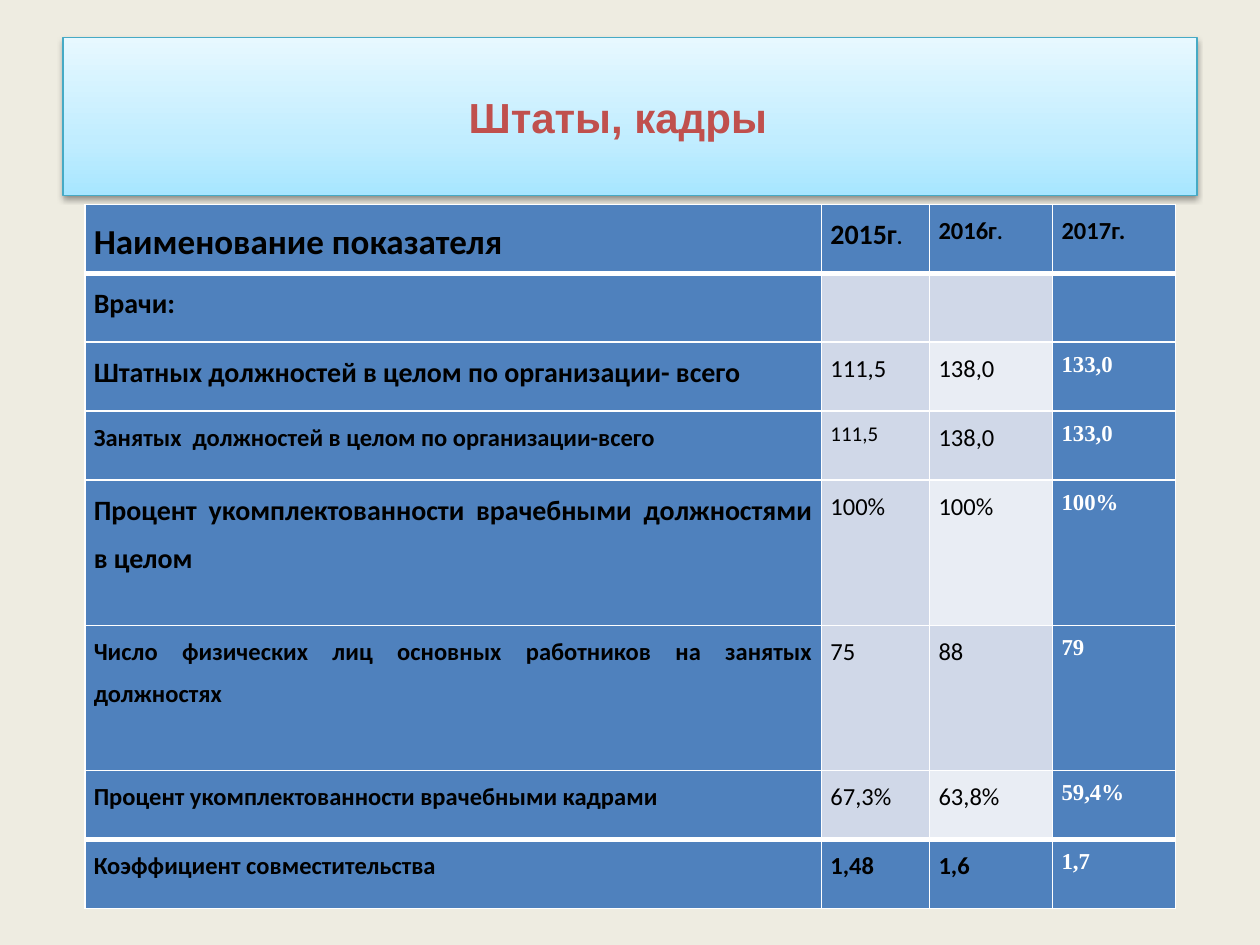
import copy

import lxml.etree
import pptx
import pptx.dml.color
import pptx.enum.shapes
import pptx.enum.text
import pptx.oxml.ns
import pptx.util

Cm, Pt = pptx.util.Cm, pptx.util.Pt
RGBColor = pptx.dml.color.RGBColor
qn = pptx.oxml.ns.qn

SAND = RGBColor(0xEE, 0xEC, 0xE1)
BLUE = RGBColor(0x4F, 0x81, 0xBD)
BAND = RGBColor(0xD0, 0xD8, 0xE8)
PALE_BAND = RGBColor(0xE9, 0xED, 0xF4)
TEAL = RGBColor(0x46, 0xAA, 0xC5)
RED = RGBColor(0xC0, 0x50, 0x4D)
BLACK = RGBColor(0, 0, 0)
WHITE = RGBColor(0xFF, 0xFF, 0xFF)
TITLE_GRADIENT = [
    (0, RGBColor(0xA7, 0xE6, 0xFF)),
    (0.35, RGBColor(0xC1, 0xED, 0xFF)),
    (1, RGBColor(0xE7, 0xF8, 0xFF)),
]

COLUMN_WIDTHS = [14.85, 2.18, 2.48, 2.48]
ROW_HEIGHT, TALL_ROW_HEIGHT = 1.39, 2.93
TALL_ROWS = (4, 5)

# Each cell is a list of (text, size) runs.
STAFF_ROWS = [
    [[("Наименование показателя", 20)], [("2015г", 16), (".", 12)],
     [("2016г", 14), (".", 12)], [("2017г.", 14)]],
    [[("Врачи:", 16)], [], [], []],
    [[("Штатных должностей в целом по организации- всего", 16)],
     [("111,5", 14)], [("138,0", 14)], [("133,0", 13)]],
    [[("Занятых  должностей в целом по организации-всего", 14)],
     [("111,5", 12)], [("138,0", 14)], [("133,0", 13)]],
    [[("Процент укомплектованности врачебными должностями в целом", 16)],
     [("100%", 14)], [("100%", 14)], [("100%", 13)]],
    [[("Число физических лиц основных работников на занятых должностях", 14)],
     [("75", 14)], [("88", 14)], [("79", 13)]],
    [[("Процент укомплектованности врачебными кадрами", 14)],
     [("67,3%", 14)], [("63,8%", 14)], [("59,4%", 13)]],
    [[("Коэффициент совместительства", 14)],
     [("1,48", 14)], [("1,6", 14)], [("1,7", 13)]],
]
LAST_ROW = len(STAFF_ROWS) - 1
LAST_COLUMN = len(COLUMN_WIDTHS) - 1


class SlideBuilder:
    title_font = "Arial"
    body_font = "Calibri"
    latest_year_font = "Times New Roman"
    line_spacing = 1.4

    def __init__(self, slide):
        self.slide = slide

    def background(self, color):
        fill = self.slide.background.fill
        fill.solid()
        fill.fore_color.rgb = color

    def format_run(self, run, size, font, color, bold=True):
        run.font.size = Pt(size)
        run.font.name = font
        run.font.color.rgb = color
        run.font.bold = bold

    def title(self, text, left, top, width, height):
        banner = self.slide.shapes.add_shape(
            pptx.enum.shapes.MSO_SHAPE.RECTANGLE,
            Cm(left), Cm(top), Cm(width), Cm(height))
        self.gradient(banner, TITLE_GRADIENT)
        banner.line.color.rgb = TEAL
        banner.line.width = Pt(0.75)
        self.drop_shadow(banner)
        frame = banner.text_frame
        frame.text = text
        frame.word_wrap = True
        frame.margin_right = Cm(0.74)
        frame.vertical_anchor = pptx.enum.text.MSO_ANCHOR.MIDDLE
        frame.paragraphs[0].alignment = pptx.enum.text.PP_ALIGN.CENTER
        self.format_run(frame.paragraphs[0].runs[0], 24, self.title_font, RED)

    def gradient(self, shape, stops):
        """Fill from bottom to top with any number of stops."""
        shape.fill.gradient()
        shape.fill.gradient_angle = 90
        stop_list = shape._element.spPr.find(".//" + qn("a:gsLst"))
        stop_list.insert(1, copy.deepcopy(stop_list[0]))
        for stop, (position, color) in zip(shape.fill.gradient_stops, stops):
            stop.position = position
            stop.color.rgb = color

    def drop_shadow(self, shape):
        shape.shadow.inherit = False
        effects = shape._element.spPr.find(qn("a:effectLst"))
        shadow = lxml.etree.SubElement(
            effects, qn("a:outerShdw"), blurRad=str(Pt(3.1)),
            dist=str(Pt(1.6)), dir="5400000", rotWithShape="0")
        color = lxml.etree.SubElement(shadow, qn("a:srgbClr"), val=str(BLACK))
        lxml.etree.SubElement(color, qn("a:alpha"), val="38000")

    def staff_table(self, rows, left, top):
        heights = [TALL_ROW_HEIGHT if i in TALL_ROWS else ROW_HEIGHT
                   for i in range(len(rows))]
        table = self.slide.shapes.add_table(
            len(rows), len(COLUMN_WIDTHS), Cm(left), Cm(top),
            Cm(sum(COLUMN_WIDTHS)), Cm(sum(heights))).table
        table.first_row = table.horz_banding = False
        for column, width in zip(table.columns, COLUMN_WIDTHS):
            column.width = Cm(width)
        for row_index, cells in enumerate(rows):
            table.rows[row_index].height = Cm(heights[row_index])
            for column_index, runs in enumerate(cells):
                self.cell(table.cell(row_index, column_index),
                          runs, row_index, column_index)

    def cell(self, cell, runs, row, column):
        inner = 0 < row < LAST_ROW
        latest_year = row > 0 and column == LAST_COLUMN
        is_value = inner and 0 < column < LAST_COLUMN
        cell.margin_left = cell.margin_right = Cm(0.18)
        cell.margin_top = cell.margin_bottom = 0
        self.borders(cell, top=3 if row in (1, LAST_ROW) else 1,
                     bottom=3 if row in (0, LAST_ROW - 1) else 1)
        cell.fill.solid()
        if not is_value:
            cell.fill.fore_color.rgb = BLUE
        elif column == 2 and row % 2 == 0:
            cell.fill.fore_color.rgb = PALE_BAND
        else:
            cell.fill.fore_color.rgb = BAND
        paragraph = cell.text_frame.paragraphs[0]
        paragraph.alignment = pptx.enum.text.PP_ALIGN.JUSTIFY
        paragraph.line_spacing = self.line_spacing
        for text, size in runs:
            run = paragraph.add_run()
            run.text = text
            self.format_run(
                run, size,
                self.latest_year_font if latest_year else self.body_font,
                WHITE if latest_year else BLACK,
                bold=not is_value)

    def borders(self, cell, top, bottom):
        """Draw white edges; call before the fill, which must follow them."""
        properties = cell._tc.get_or_add_tcPr()
        for edge, width in (("L", 1), ("R", 1), ("T", top), ("B", bottom)):
            line = lxml.etree.SubElement(
                properties, qn("a:ln" + edge), w=str(Pt(width)))
            fill = lxml.etree.SubElement(line, qn("a:solidFill"))
            lxml.etree.SubElement(fill, qn("a:srgbClr"), val=str(WHITE))


def main():
    presentation = pptx.Presentation()
    presentation.slide_width = Cm(25.4)
    presentation.slide_height = Cm(19.05)
    builder = SlideBuilder(
        presentation.slides.add_slide(presentation.slide_layouts[6]))
    builder.background(SAND)
    builder.title("Штаты, кадры", 1.27, 0.76, 22.86, 3.18)
    builder.staff_table(STAFF_ROWS, 1.71, 4.12)
    presentation.save("out.pptx")


if __name__ == "__main__":
    main()
